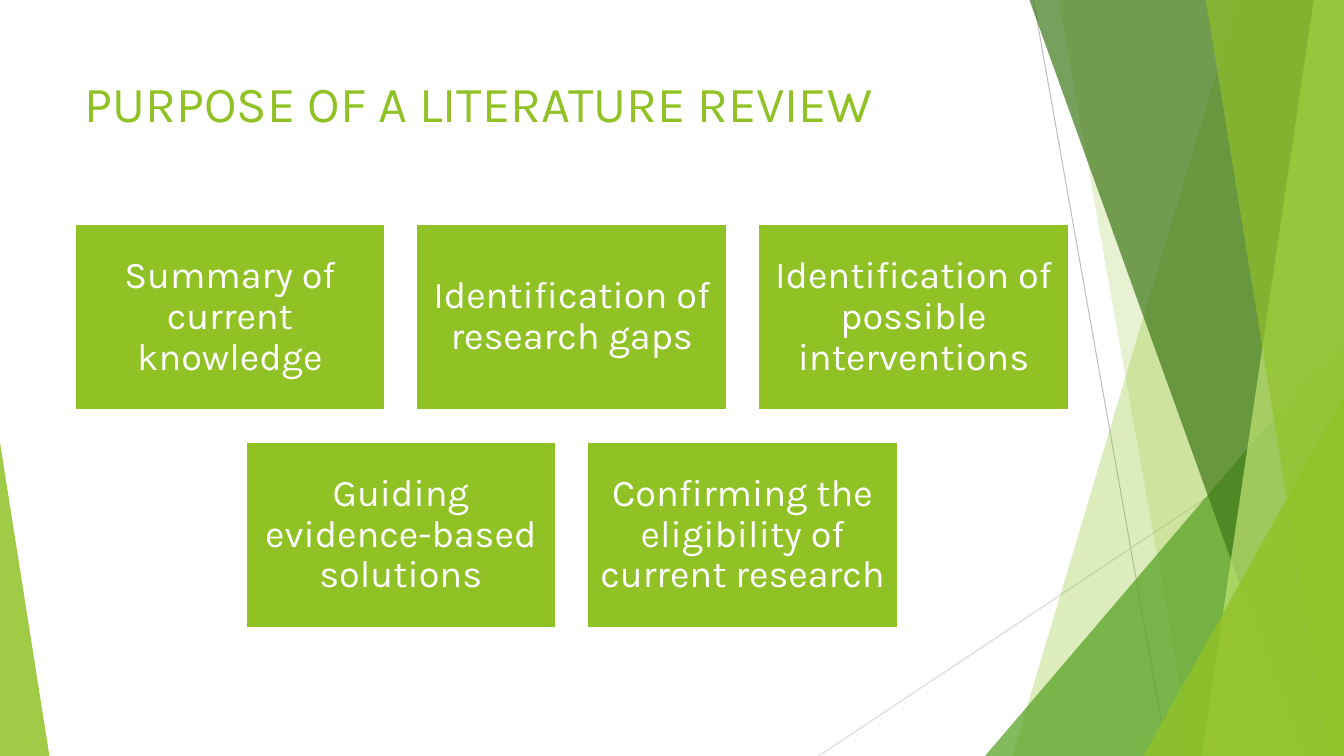
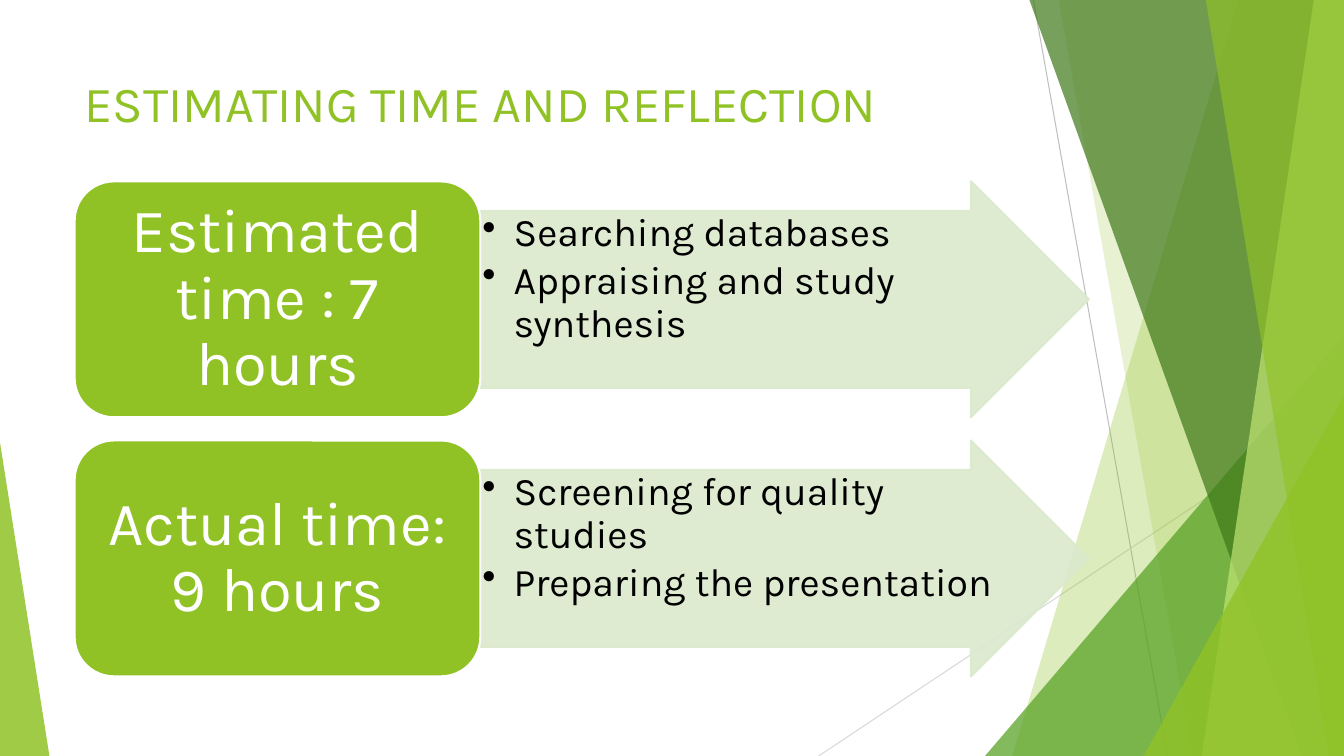
from lxml.etree import SubElement
from pptx import Presentation
from pptx.dml.color import RGBColor
from pptx.enum.shapes import MSO_CONNECTOR, MSO_SHAPE
from pptx.enum.text import MSO_ANCHOR as ANCHOR, MSO_AUTO_SIZE, PP_ALIGN as ALIGN
from pptx.oxml.ns import qn
from pptx.util import Inches, Pt

WIDTH, HEIGHT = 13.33, 7.5
LEFT = 0.74
FONT = "Karla"
LIME, GREEN, FOREST, PALE_LIME = "90C226", "54A021", "3F7819", "C0E474"
PALE, WHITE, BLACK = "DBE9CD", "FFFFFF", "000000"

# Background: hairlines are (start, end, colour); bands run from a top x and a
# bottom x to the right edge; wedges rise from the bottom edge.
HAIRLINES = [
    ((10.25, 0), (11.58, HEIGHT), "BFBFBF"),
    ((WIDTH, 4.03), (8.12, HEIGHT), "D9D9D9"),
]
FACETS = [
    ("band", (12.28, 10.04), LIME, 30),
    ("band", (10.5, 11.83), LIME, 20),
    ("wedge", (9.77, 3.33, 3.56, 1), GREEN, 72),
    ("band", (10.21, 12.91), FOREST, 70),
    ("band", (13.03, 11.92), PALE_LIME, 70),
    ("band", (11.96, 13.18), LIME, 65),
    ("wedge", (11.34, 3.93, 1.99, 1), LIME, 80),
    ("wedge", (0, 4.39, 0.49, 0), LIME, 85),
]

PURPOSE_TITLE = "PURPOSE OF A LITERATURE REVIEW"
PURPOSE_ROWS = [
    ["Summary of current knowledge", "Identification of research gaps",
     "Identification of possible interventions"],
    ["Guiding evidence-based solutions",
     "Confirming the eligibility of current research"],
]
TIME_TITLE = "ESTIMATING TIME AND REFLECTION"
TIME_ROWS = [
    ("Estimated time : 7 hours",
     ["Searching databases", "Appraising and study synthesis"]),
    ("Actual time: 9 hours",
     ["Screening for quality studies", "Preparing the presentation"]),
]

TITLE_TEXT = {"size": 36, "color": LIME, "align": ALIGN.LEFT, "spacing": 1}
CARD_TEXT = {"size": 27, "color": WHITE, "align": ALIGN.CENTER}
LABEL_TEXT = {"size": 44, "color": WHITE, "align": ALIGN.CENTER}
BULLET_TEXT = {"size": 28, "color": BLACK, "align": ALIGN.LEFT, "after": 4,
               "bullet": True}


def rgb(code):
    return RGBColor.from_string(code)


def set_all(target, values):
    for name, value in values.items():
        setattr(target, name, value)


def paint(shape, fill, line=None, opacity=100):
    shape.shadow.inherit = False
    shape.fill.solid()
    shape.fill.fore_color.rgb = rgb(fill)
    if line:
        shape.line.color.rgb = rgb(line)
        shape.line.width = Pt(1.5)
    else:
        shape.line.fill.background()
    if opacity < 100:
        for color in shape.element.spPr.iter(qn("a:srgbClr")):
            SubElement(color, qn("a:alpha"), val=str(opacity * 1000))


def add_block(shapes, kind, left, top, width, height):
    return shapes.add_shape(kind, *map(Inches, (left, top, width, height)))


def write(shape, lines, style, anchor=ANCHOR.MIDDLE, margins=(0.11, 0.11)):
    """Fill a shape with paragraphs; margins are (sides, top and bottom)."""
    side, end = map(Inches, margins)
    frame = shape.text_frame
    set_all(frame, {"word_wrap": True, "auto_size": MSO_AUTO_SIZE.NONE,
                    "vertical_anchor": anchor,
                    "margin_left": side, "margin_right": side,
                    "margin_top": end, "margin_bottom": end})
    for index, line in enumerate(lines):
        para = frame.add_paragraph() if index else frame.paragraphs[0]
        set_all(para, {"alignment": style["align"],
                       "line_spacing": style.get("spacing", 0.9),
                       "space_before": Pt(0),
                       "space_after": Pt(style.get("after", 0))})
        span = para.add_run()
        span.text = line
        set_all(span.font, {"name": FONT, "size": Pt(style["size"])})
        span.font.color.rgb = rgb(style["color"])
        if style.get("bullet"):
            props = para._p.get_or_add_pPr()
            props.set("marL", str(Inches(0.31)))
            props.set("indent", str(Inches(-0.31)))
            SubElement(props, qn("a:buChar"), char="•")


def add_band(shapes, top_x, bottom_x):
    corners = [(top_x, 0), (WIDTH, 0), (WIDTH, HEIGHT), (bottom_x, HEIGHT)]
    points = [(Inches(x), Inches(y)) for x, y in corners]
    outline = shapes.build_freeform(*points[0])
    outline.add_line_segments(points[1:], close=True)
    return outline.convert_to_shape()


def add_wedge(shapes, left, top, width, apex):
    wedge = add_block(shapes, MSO_SHAPE.ISOSCELES_TRIANGLE,
                      left, top, width, HEIGHT - top)
    wedge.adjustments[0] = apex
    return wedge


def decorate(layout, slide):
    """Draw the background as a group on a slide and move it to the layout."""
    group = slide.shapes.add_group_shape()
    for start, end, color in HAIRLINES:
        hairline = group.shapes.add_connector(
            MSO_CONNECTOR.STRAIGHT, *map(Inches, start + end))
        hairline.line.color.rgb = rgb(color)
        hairline.line.width = Pt(0.75)
        SubElement(hairline.element.spPr, qn("a:effectLst"))
    makers = {"band": add_band, "wedge": add_wedge}
    for kind, place, color, opacity in FACETS:
        paint(makers[kind](group.shapes, *place), color, opacity=opacity)
    for number, props in enumerate(group.element.iter(qn("p:cNvPr")), 100):
        props.set("id", str(number))
    layout.shapes.element.insert(2, group.element)


def add_titled_slide(deck, layout, title):
    slide = deck.slides.add_slide(layout)
    box = slide.shapes.title
    set_all(box, {"left": Inches(LEFT), "top": Inches(0.67),
                  "width": Inches(9.4), "height": Inches(1.44)})
    write(box, [title], TITLE_TEXT, ANCHOR.TOP, (0.1, 0.05))
    return slide


def fill_purpose(slide):
    width, height, gap, top = 3.08, 1.85, 0.31, 2.22
    center = LEFT + (3 * width + 2 * gap) / 2
    for row, texts in enumerate(PURPOSE_ROWS):
        left = center - (len(texts) * (width + gap) - gap) / 2
        for column, text in enumerate(texts):
            card = add_block(slide.shapes, MSO_SHAPE.RECTANGLE,
                             left + column * (width + gap),
                             top + row * (height + gap), width, height)
            paint(card, LIME, WHITE)
            write(card, [text], CARD_TEXT)


def fill_time(slide):
    total, height, pitch, top = 10.06, 2.34, 2.57, 1.8
    label_width = 0.4 * total
    for row, (label_text, tasks) in enumerate(TIME_ROWS):
        y = top + row * pitch
        arrow = add_block(slide.shapes, MSO_SHAPE.RIGHT_ARROW,
                          LEFT + label_width, y, total - label_width, height)
        arrow.adjustments[0] = 0.75
        paint(arrow, PALE, PALE, 90)
        write(arrow, tasks, BULLET_TEXT, ANCHOR.TOP, (0.02, 0.02))
        label = add_block(slide.shapes, MSO_SHAPE.ROUNDED_RECTANGLE,
                          LEFT, y, label_width, height)
        paint(label, LIME, WHITE)
        write(label, [label_text], LABEL_TEXT, margins=(0.18, 0.09))


def main():
    deck = Presentation()
    deck.slide_width, deck.slide_height = Inches(WIDTH), Inches(HEIGHT)
    layout = deck.slide_layouts.get_by_name("Title Only")
    purpose = add_titled_slide(deck, layout, PURPOSE_TITLE)
    decorate(layout, purpose)
    fill_purpose(purpose)
    fill_time(add_titled_slide(deck, layout, TIME_TITLE))
    deck.save("out.pptx")


if __name__ == "__main__":
    main()
